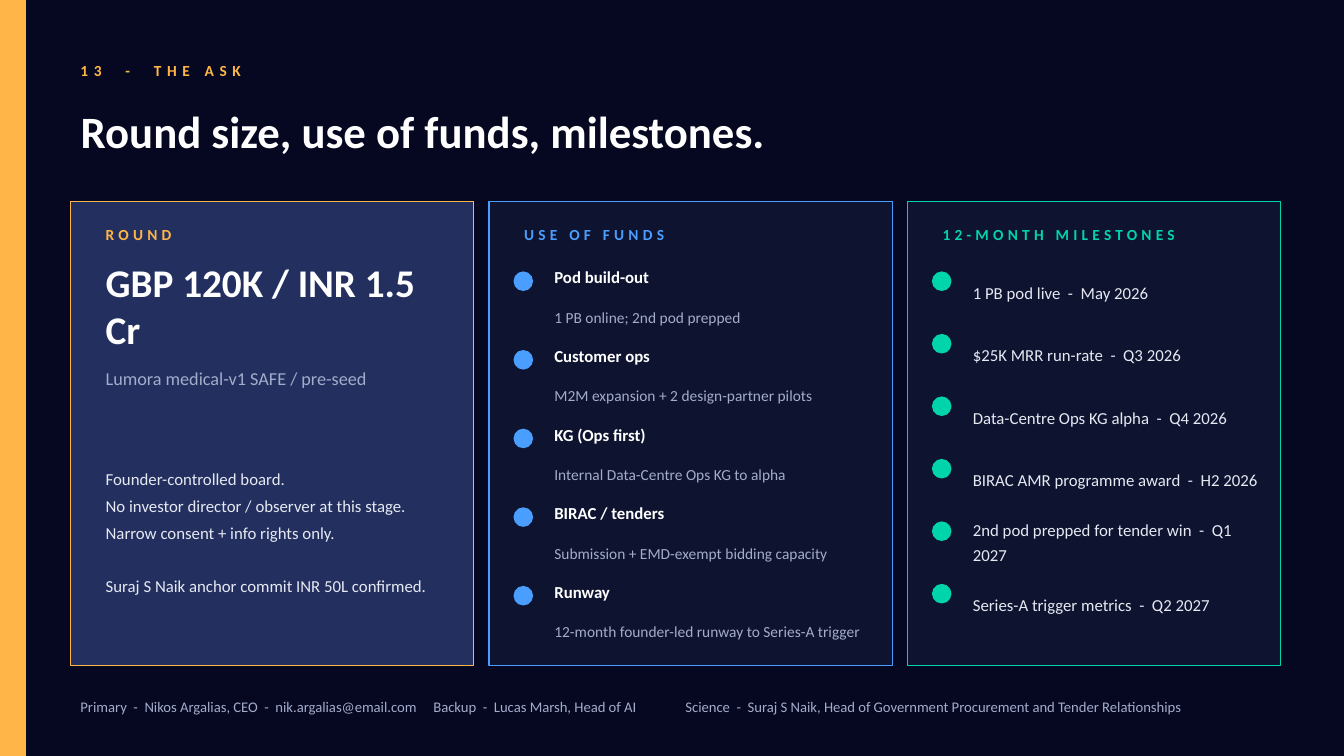
from dataclasses import dataclass

from lxml.etree import SubElement
from pptx import Presentation
from pptx.dml.color import RGBColor
from pptx.enum.shapes import MSO_SHAPE
from pptx.enum.text import MSO_ANCHOR, MSO_AUTO_SIZE, PP_ALIGN
from pptx.oxml.ns import qn
from pptx.shapes.autoshape import Shape
from pptx.slide import Slide
from pptx.util import Inches, Pt

COLORS = {
    "background": "050820",
    "amber": "FFB547",
    "blue": "4A9EFF",
    "green": "00D4AA",
    "navy": "23305F",
    "panel": "0E1430",
    "white": "FFFFFF",
    "light": "E6E9F2",
    "muted": "A4ACCB",
}
FONT = "Calibri"
CARD_TOP, CARD_HEIGHT = 2, 4.6
LIST_TOP = 2.6
FUND_STEP, MILESTONE_STEP = 0.78, 0.62


@dataclass(frozen=True)
class Box:
    left: float
    top: float
    width: float
    height: float


@dataclass(frozen=True)
class TextStyle:
    size: float
    color: str
    bold: bool = False
    line_spacing: float | None = None
    tracking: float = 0


@dataclass(frozen=True)
class Card:
    heading: str
    left: float
    width: float
    heading_width: float
    fill: str
    accent: str


@dataclass(frozen=True)
class Fund:
    name: str
    detail: str


CARDS = [
    Card("ROUND", 0.7, 4, 3.6, "navy", "amber"),
    Card("USE OF FUNDS", 4.85, 4, 3.6, "panel", "blue"),
    Card("12-MONTH MILESTONES", 9, 3.7, 3.4, "panel", "green"),
]
FUNDS = [
    Fund("Pod build-out", "1 PB online; 2nd pod prepped"),
    Fund("Customer ops", "M2M expansion + 2 design-partner pilots"),
    Fund("KG (Ops first)", "Internal Data-Centre Ops KG to alpha"),
    Fund("BIRAC / tenders", "Submission + EMD-exempt bidding capacity"),
    Fund("Runway", "12-month founder-led runway to Series-A trigger"),
]
MILESTONES = [
    "1 PB pod live  -  May 2026",
    "$25K MRR run-rate  -  Q3 2026",
    "Data-Centre Ops KG alpha  -  Q4 2026",
    "BIRAC AMR programme award  -  H2 2026",
    "2nd pod prepped for tender win  -  Q1 2027",
    "Series-A trigger metrics  -  Q2 2027",
]
TERMS = [
    "Founder-controlled board.",
    "No investor director / observer at this stage.",
    "Narrow consent + info rights only.",
    "Suraj S Naik anchor commit INR 50L confirmed.",
]
CONTACTS = [
    "Primary  -  Nikos Argalias, CEO  -  nik.argalias@email.com",
    "Backup  -  Lucas Marsh, Head of AI",
    "Science  -  Suraj S Naik, Head of Government Procurement and Tender Relationships",
]
CONTACT_TABS = [3.68, 6.05]


def rgb(name: str) -> RGBColor:
    return RGBColor.from_string(COLORS[name])


def place(shape: Shape, box: Box) -> None:
    shape.left, shape.top = Inches(box.left), Inches(box.top)
    shape.width, shape.height = Inches(box.width), Inches(box.height)


def write_text(shape: Shape, lines: list[str], style: TextStyle) -> None:
    frame = shape.text_frame
    frame.word_wrap = True
    frame.auto_size = MSO_AUTO_SIZE.NONE
    frame.vertical_anchor = MSO_ANCHOR.MIDDLE
    frame.text = "\n".join(lines)
    for paragraph in frame.paragraphs:
        paragraph.alignment = PP_ALIGN.LEFT
        if style.line_spacing:
            paragraph.line_spacing = Pt(style.line_spacing)
        font = paragraph.font
        font.name, font.size, font.bold = FONT, Pt(style.size), style.bold
        font.color.rgb = rgb(style.color)
        if style.tracking:
            for run in paragraph.runs:
                run._r.get_or_add_rPr().set("spc", str(int(style.tracking * 100)))


def add_text(slide: Slide, box: Box, lines: list[str], style: TextStyle) -> Shape:
    shape = slide.shapes.add_textbox(0, 0, 0, 0)
    place(shape, box)
    write_text(shape, lines, style)
    return shape


def add_filled(slide: Slide, kind: MSO_SHAPE, box: Box, fill: str, line: str) -> None:
    shape = slide.shapes.add_shape(kind, 0, 0, 0, 0)
    place(shape, box)
    shape.shadow.inherit = False
    shape.fill.solid()
    shape.fill.fore_color.rgb = rgb(fill)
    shape.line.color.rgb = rgb(line)
    shape.line.width = Pt(1)


def add_card(slide: Slide, card: Card) -> None:
    box = Box(card.left, CARD_TOP, card.width, CARD_HEIGHT)
    add_filled(slide, MSO_SHAPE.RECTANGLE, box, card.fill, card.accent)
    add_text(slide, Box(card.left + 0.25, 2.15, card.heading_width, 0.35),
             [card.heading], TextStyle(11, card.accent, bold=True, tracking=3))


def add_dot(slide: Slide, card: Card, row_top: float) -> None:
    box = Box(card.left + 0.25, row_top + 0.1, 0.18, 0.18)
    add_filled(slide, MSO_SHAPE.OVAL, box, card.accent, card.accent)


def add_round(slide: Slide, card: Card) -> None:
    left, width = card.left + 0.25, 3.6
    add_text(slide, Box(left, 2.55, width, 0.95), ["GBP 120K / INR 1.5 Cr"],
             TextStyle(28, "white", bold=True))
    add_text(slide, Box(left, 3.55, width, 0.4), ["Lumora medical-v1 SAFE / pre-seed"],
             TextStyle(13, "muted"))
    terms = add_text(slide, Box(left, 4.05, width, 2.4), TERMS,
                     TextStyle(12, "light", line_spacing=19))
    terms.text_frame.paragraphs[-1].space_before = Pt(19)


def add_funds(slide: Slide, card: Card) -> None:
    left, width = card.left + 0.55, 3.3
    for index, fund in enumerate(FUNDS):
        top = LIST_TOP + index * FUND_STEP
        add_dot(slide, card, top)
        add_text(slide, Box(left, top, width, 0.3), [fund.name],
                 TextStyle(12, "white", bold=True))
        add_text(slide, Box(left, top + 0.3, width, 0.45), [fund.detail],
                 TextStyle(11, "muted", line_spacing=16))


def add_milestones(slide: Slide, card: Card) -> None:
    for index, milestone in enumerate(MILESTONES):
        top = LIST_TOP + index * MILESTONE_STEP
        add_dot(slide, card, top)
        add_text(slide, Box(card.left + 0.55, top, 3.05, 0.55), [milestone],
                 TextStyle(12, "light", line_spacing=18))


def add_contacts(slide: Slide) -> None:
    shape = slide.shapes.add_textbox(0, 0, 0, 0)
    place(shape, Box(0.7, 6.85, 12, 0.32))
    properties = shape.text_frame.paragraphs[0]._p.get_or_add_pPr()
    tab_list = SubElement(properties, qn("a:tabLst"))
    for position in CONTACT_TABS:
        SubElement(tab_list, qn("a:tab"), pos=str(Inches(position)), algn="l")
    write_text(shape, ["\t".join(CONTACTS)], TextStyle(10.5, "muted"))


def main() -> None:
    presentation = Presentation()
    presentation.slide_width, presentation.slide_height = Inches(13.33), Inches(7.5)
    slide = presentation.slides.add_slide(presentation.slide_layouts.get_by_name("Title Only"))
    slide.background.fill.solid()
    slide.background.fill.fore_color.rgb = rgb("background")

    add_filled(slide, MSO_SHAPE.RECTANGLE, Box(0, 0, 0.25, 7.5), "amber", "amber")
    add_text(slide, Box(0.7, 0.55, 8, 0.3), ["13  -  THE ASK"],
             TextStyle(11, "amber", bold=True, tracking=4))
    place(slide.shapes.title, Box(0.7, 0.95, 12, 0.7))
    write_text(slide.shapes.title, ["Round size, use of funds, milestones."],
               TextStyle(32, "white", bold=True))
    for card, add_content in zip(CARDS, (add_round, add_funds, add_milestones)):
        add_card(slide, card)
        add_content(slide, card)
    add_contacts(slide)
    presentation.save("out.pptx")


if __name__ == "__main__":
    main()
